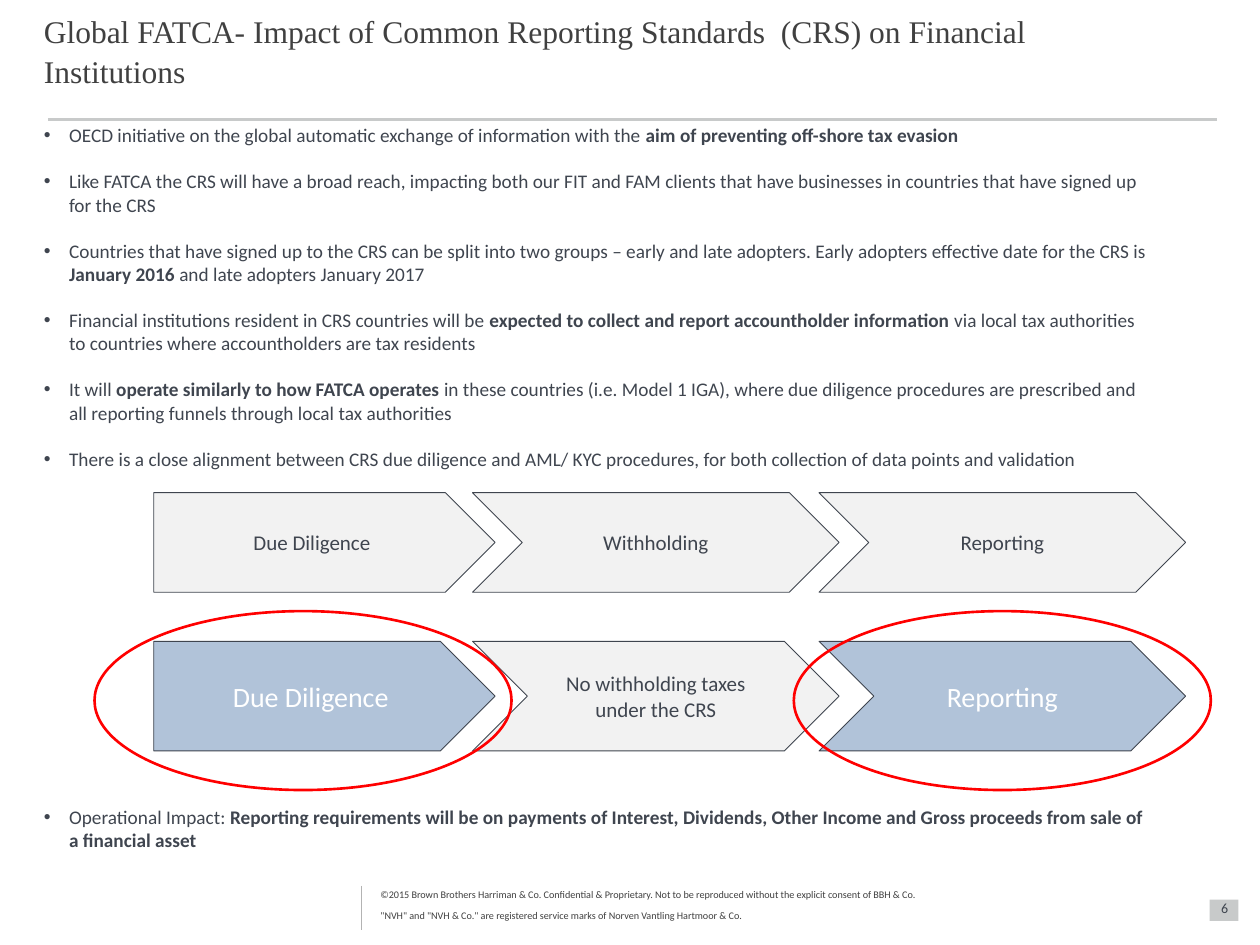
"""Build the slide on the impact of Common Reporting Standards."""
from lxml.etree import SubElement
from pptx import Presentation
from pptx.dml.color import RGBColor
from pptx.enum.shapes import MSO_CONNECTOR as Line, MSO_SHAPE as Shape
from pptx.enum.text import MSO_ANCHOR as Anchor, PP_ALIGN as Align
from pptx.oxml.ns import qn
from pptx.util import Inches, Pt

SLATE = RGBColor(0x3F, 0x45, 0x4F)
CHARCOAL = RGBColor(0x40, 0x40, 0x40)
RULE_GREY = RGBColor(0xC8, 0xCA, 0xCA)
FOOTER_GREY = RGBColor(0xB3, 0xB3, 0xB3)
PALE = RGBColor(0xF2, 0xF2, 0xF2)
BLUE = RGBColor(0xB1, 0xC3, 0xD9)
RED = RGBColor(0xFF, 0x00, 0x00)
WHITE = RGBColor(0xFF, 0xFF, 0xFF)

TITLE = "Global FATCA- Impact of Common Reporting Standards  (CRS) on Financial Institutions"
PAGE_NUMBER = "6"
FOOTER = [
    "©2015 Brown Brothers Harriman & Co. Confidential & Proprietary. "
    "Not to be reproduced without the explicit consent of BBH & Co.",
    '"NVH" and "NVH & Co." are registered service marks of Norven Vantling Hartmoor & Co.',
]
POINTS = [
    [("OECD initiative on the global automatic exchange of information with the ", False),
     ("aim of preventing off-shore tax evasion", True)],
    [("Like FATCA the CRS will have a broad reach, impacting both our FIT and FAM clients "
      "that have businesses in countries that have signed up for the CRS", False)],
    [("Countries that have signed up to the CRS can be split into two groups – early and late "
      "adopters. Early adopters effective date for the CRS is ", False),
     ("January 2016 ", True), ("and late adopters January 2017", False)],
    [("Financial institutions resident in CRS countries will be ", False),
     ("expected to collect and report accountholder information ", True),
     ("via local tax authorities to countries where accountholders are tax residents", False)],
    [("It will ", False), ("operate similarly to how FATCA operates", True),
     (" in these countries (i.e. Model 1 IGA), where due diligence procedures are prescribed "
      "and all reporting funnels through local tax authorities", False)],
    [("There is a close alignment between CRS due diligence and AML/ KYC procedures, "
      "for both collection of data points and validation", False)],
]
IMPACT = [
    [("Operational Impact: ", False),
     ("Reporting requirements will be on payments of Interest, Dividends, Other Income "
      "and Gross proceeds from sale of a financial asset", True)],
]
COLUMNS = [(Shape.PENTAGON, 1.22, 2.71), (Shape.CHEVRON, 3.75, 2.91), (Shape.CHEVRON, 6.5, 2.91)]
PLAIN = {"fill": PALE, "size": 12, "color": SLATE}
FOCUS = {"fill": BLUE, "size": 16, "color": WHITE}
PROCESS_ROWS = [
    (3.91, 0.79, [("Due Diligence", PLAIN), ("Withholding", PLAIN), ("Reporting", PLAIN)]),
    (5.09, 0.87, [("Due Diligence", FOCUS), ("No withholding taxes under the CRS", PLAIN),
                  ("Reporting", FOCUS)]),
]
RING_LEFTS = [0.75, 6.3]
LEADING = Pt(13.2)
BULLET_INDENT = Inches(0.2)


def set_all(target, values):
    for name, value in values.items():
        setattr(target, name, value)


def add_span(para, text, size, color, name="Calibri", bold=False):
    span = para.add_run()
    span.text = text
    set_all(span.font, {"size": Pt(size), "name": name, "bold": bold})
    span.font.color.rgb = color
    return span


def add_box(slide, area, **frame_values):
    frame = slide.shapes.add_textbox(*map(Inches, area)).text_frame
    set_all(frame, {"word_wrap": True, **frame_values})
    return frame


def add_bullets(slide, area, points):
    frame = add_box(slide, area, margin_top=0, margin_bottom=0)
    for index, point in enumerate(points):
        para = frame.add_paragraph() if index else frame.paragraphs[0]
        set_all(para, {"line_spacing": LEADING, "space_before": LEADING if index else Pt(0)})
        props = para._p.get_or_add_pPr()
        props.set("marL", str(BULLET_INDENT))
        props.set("indent", str(-BULLET_INDENT))
        SubElement(props, qn("a:buFont")).set("typeface", "Arial")
        SubElement(props, qn("a:buChar")).set("char", "•")
        for text, bold in point:
            add_span(para, text, 11, SLATE, bold=bold)


def add_line(slide, start, end, color, width):
    line = slide.shapes.add_connector(Line.STRAIGHT, *map(Inches, start + end))
    line.line.color.rgb = color
    line.line.width = Pt(width)
    SubElement(line._element.spPr, qn("a:effectLst"))


def add_figure(slide, kind, area, fill=None, line=None, width=0.5):
    figure = slide.shapes.add_shape(kind, *map(Inches, area))
    figure.shadow.inherit = False
    if fill is None:
        figure.fill.background()
    else:
        figure.fill.solid()
        figure.fill.fore_color.rgb = fill
    if line is None:
        figure.line.fill.background()
    else:
        figure.line.color.rgb = line
        figure.line.width = Pt(width)
    return figure


def add_footer(slide):
    frame = add_box(slide, (3.02, 7.07, 5.5, 0.3), word_wrap=False, vertical_anchor=Anchor.BOTTOM,
                    margin_left=0, margin_right=0, margin_top=0, margin_bottom=0)
    for index, text in enumerate(FOOTER):
        para = frame.add_paragraph() if index else frame.paragraphs[0]
        span = add_span(para, text, 10, CHARCOAL)
        span._r.get_or_add_rPr().set("baseline", "30000")
    add_line(slide, (2.87, 7.03), (2.87, 7.38), FOOTER_GREY, 1)
    add_figure(slide, Shape.RECTANGLE, (9.6, 7.14, 0.23, 0.17), RULE_GREY)
    number = add_box(slide, (9.52, 7.01, 0.4, 0.4), vertical_anchor=Anchor.MIDDLE).paragraphs[0]
    number.alignment = Align.CENTER
    add_span(number, PAGE_NUMBER, 8, SLATE)


def add_process(slide):
    for top, height, steps in PROCESS_ROWS:
        for (kind, left, width), (text, style) in zip(COLUMNS, steps):
            step = add_figure(slide, kind, (left, top, width, height), style["fill"], SLATE)
            set_all(step.text_frame, {"word_wrap": True, "vertical_anchor": Anchor.MIDDLE})
            para = step.text_frame.paragraphs[0]
            para.alignment = Align.CENTER
            add_span(para, text, style["size"], style["color"])
    for left in RING_LEFTS:
        add_figure(slide, Shape.OVAL, (left, 4.85, 3.31, 1.42), line=RED, width=1.5)


def main():
    deck = Presentation()
    set_all(deck, {"slide_width": Inches(10), "slide_height": Inches(7.5)})
    slide = deck.slides.add_slide(deck.slide_layouts[6])
    add_line(slide, (0.38, 0.95), (9.66, 0.95), RULE_GREY, 2)
    add_footer(slide)
    title = add_box(slide, (0.25, 0.17, 9, 0.59), vertical_anchor=Anchor.BOTTOM).paragraphs[0]
    title.line_spacing = 1.05
    add_span(title, TITLE, 18, CHARCOAL, "Times New Roman")
    add_bullets(slide, (0.25, 0.98, 9, 2.85), POINTS)
    add_bullets(slide, (0.25, 6.39, 9, 0.4), IMPACT)
    add_process(slide)
    deck.save("out.pptx")


if __name__ == "__main__":
    main()
